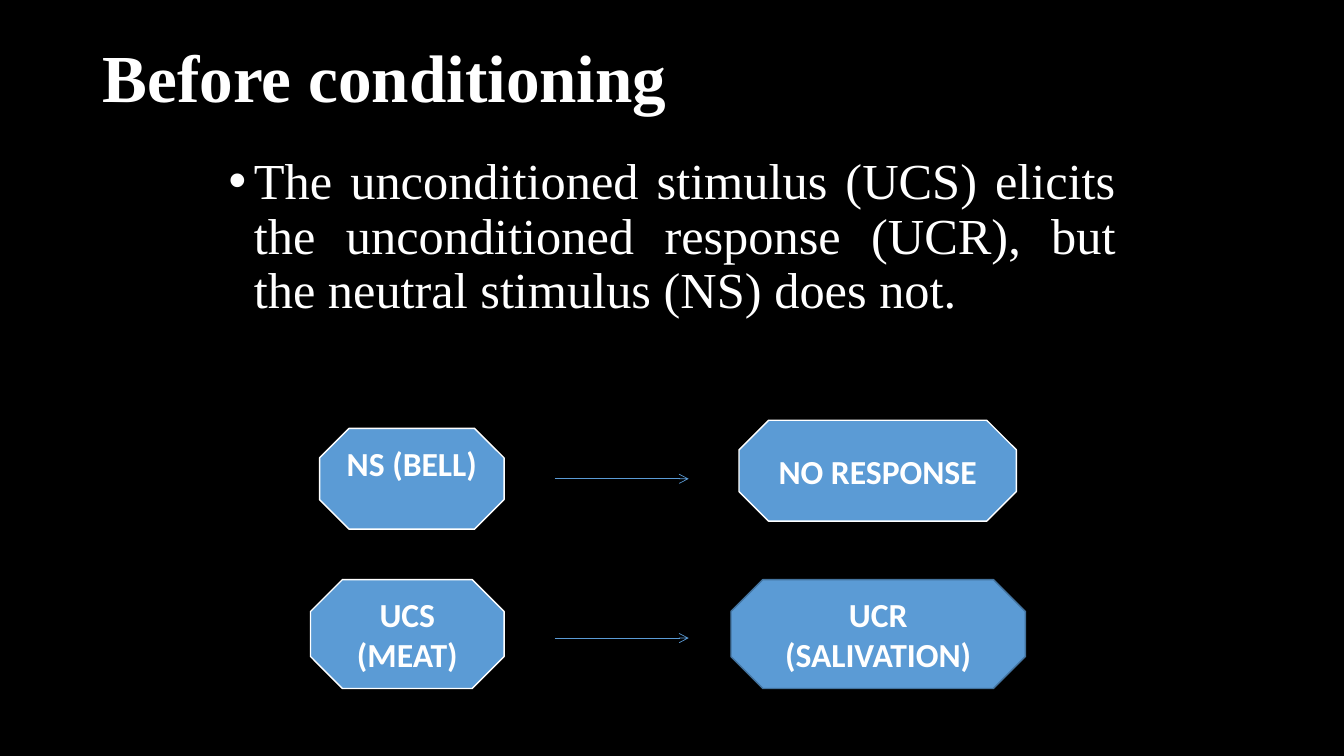
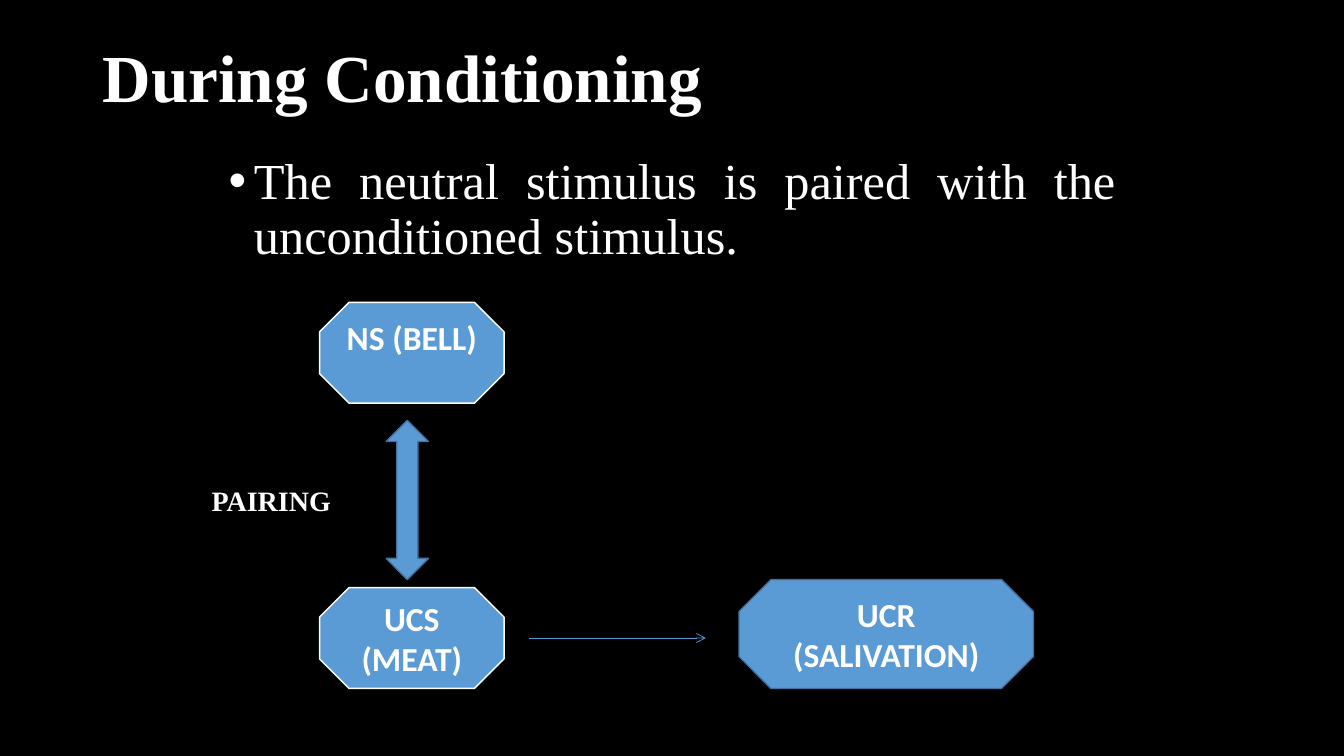
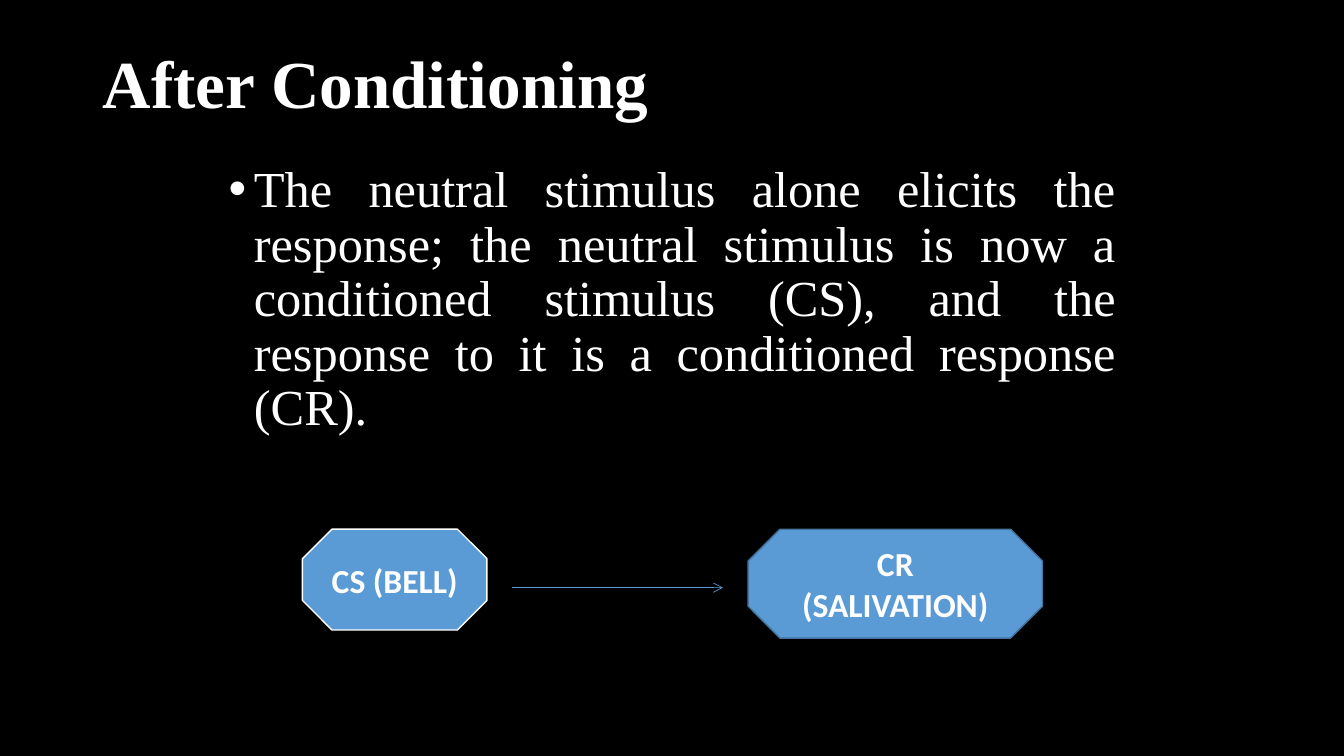
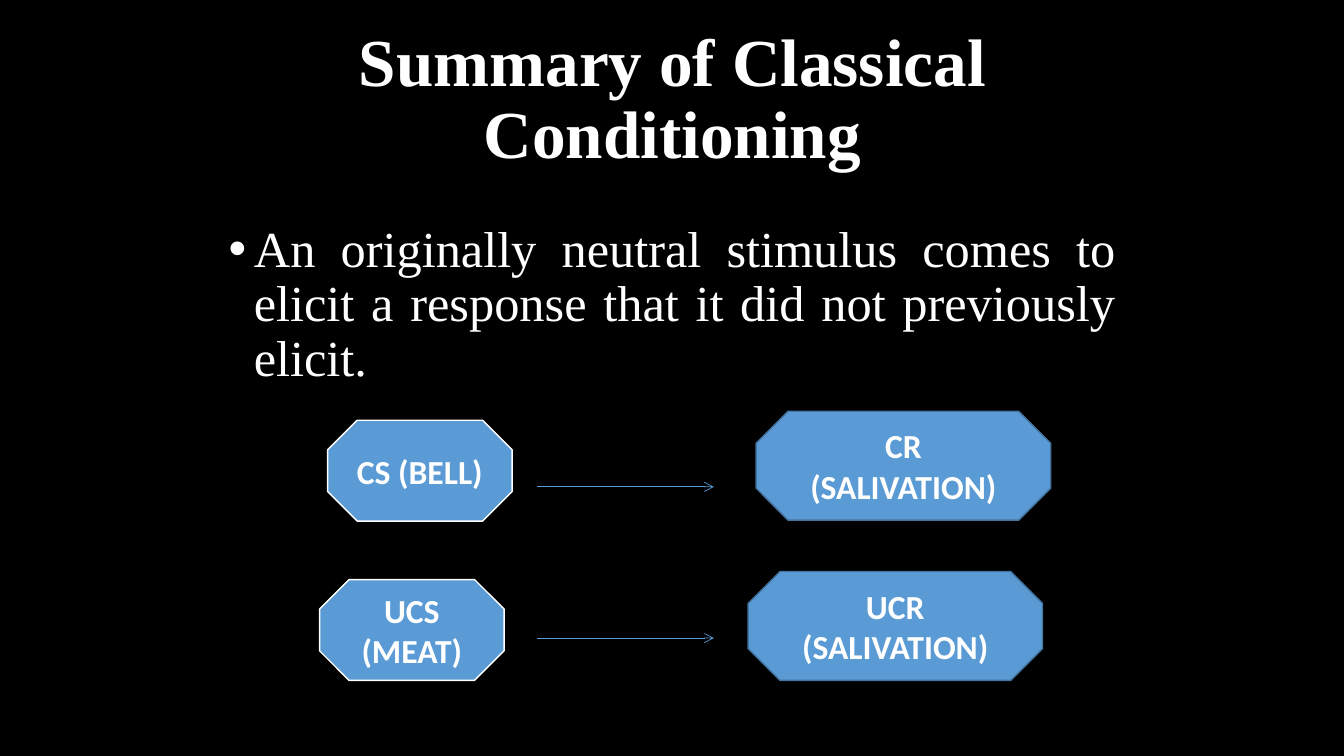
"""Build four slides that walk through classical conditioning."""
from dataclasses import dataclass

from lxml import etree
from pptx import Presentation
from pptx import util as u
from pptx.dml.color import RGBColor
from pptx.enum import shapes, text
from pptx.oxml import ns


@dataclass(frozen=True)
class Theme:
    """Hold the colours, fonts and type sizes of the deck."""
    background: RGBColor = RGBColor.from_string("000000")
    ink: RGBColor = RGBColor.from_string("FFFFFF")
    accent: RGBColor = RGBColor.from_string("5B9BD5")
    edge: RGBColor = RGBColor.from_string("43739E")
    serif: str = "Times New Roman"
    sans: str = "Calibri"
    title_size: int = 48
    body_size: int = 36
    node_size: int = 24
    label_size: int = 20


THEME = Theme()
STIMULUS = (1.83, 1)
RESPONSE = (2.92, 1.08)
BODY_BOTTOM = 7.06


def add_page(deck):
    """Add a blank slide on the dark background."""
    page = deck.slides.add_slide(deck.slide_layouts[6])
    fill = page.background.fill
    fill.solid()
    fill.fore_color.rgb = THEME.background
    return page


def add_span(para, words, font, size, bold=True):
    """Add one run of white text."""
    span = para.add_run()
    span.text = words
    span.font.name = font
    span.font.size = u.Pt(size)
    span.font.bold = bold
    span.font.color.rgb = THEME.ink


def add_text_box(page, words, left, top, width, height, size, bold=True):
    """Add a wrapped serif text box and return its paragraph."""
    box = page.shapes.add_textbox(*map(u.Inches, (left, top, width, height)))
    box.text_frame.word_wrap = True
    para = box.text_frame.paragraphs[0]
    add_span(para, words, THEME.serif, size, bold)
    return para


def add_title(page, words, top=0.39, left=0.92, width=11.5, align=text.PP_ALIGN.LEFT):
    """Add the slide title."""
    para = add_text_box(page, words, left, top, width, 1.45, THEME.title_size)
    para.alignment = align
    para.line_spacing = 0.9


def add_body(page, words, top=1.5):
    """Add the justified bullet below the title."""
    para = add_text_box(page, words, 2.17, top, 9, BODY_BOTTOM - top, THEME.body_size, False)
    para.alignment = text.PP_ALIGN.JUSTIFY
    para.line_spacing = 0.9
    props = para._p.get_or_add_pPr()
    props.set("marL", str(u.Inches(0.25)))
    props.set("indent", str(u.Inches(-0.25)))
    etree.SubElement(props, ns.qn("a:buFont")).set("typeface", "Arial")
    etree.SubElement(props, ns.qn("a:buChar")).set("char", "•")


def add_block(page, kind, left, top, size, edge):
    """Add a filled preset shape."""
    block = page.shapes.add_shape(kind, *map(u.Inches, (left, top, *size)))
    block.shadow.inherit = False
    block.fill.solid()
    block.fill.fore_color.rgb = THEME.accent
    block.line.color.rgb = edge
    block.line.width = u.Pt(1)
    return block


def add_node(page, lines, left, top, size=STIMULUS, edge=THEME.ink, raised=False):
    """Add a labelled octagon, with its text raised if asked."""
    node = add_block(page, shapes.MSO_SHAPE.OCTAGON, left, top, size, edge)
    frame = node.text_frame
    frame.word_wrap = True
    frame.vertical_anchor = text.MSO_ANCHOR.MIDDLE
    if raised:
        frame.vertical_anchor = text.MSO_ANCHOR.TOP
        frame.margin_top = 0
    for index, words in enumerate(lines):
        para = frame.add_paragraph() if index else frame.paragraphs[0]
        para.alignment = text.PP_ALIGN.CENTER
        add_span(para, words, THEME.sans, THEME.node_size)


def add_salivation(page, name, left, top):
    """Add a salivation response octagon."""
    add_node(page, [name, "(SALIVATION)"], left, top, RESPONSE, THEME.edge)


def add_arrow(page, start, end, level):
    """Add a thin horizontal arrow."""
    arrow = page.shapes.add_connector(
        shapes.MSO_CONNECTOR.STRAIGHT, *map(u.Inches, (start, level, end, level)))
    arrow.line.color.rgb = THEME.accent
    arrow.line.width = u.Pt(0.5)
    etree.SubElement(arrow.line._get_or_add_ln(), ns.qn("a:tailEnd")).set("type", "arrow")
    etree.SubElement(arrow._element.spPr, ns.qn("a:effectLst"))


def build_before(deck):
    """Build the slide on the state before conditioning."""
    page = add_page(deck)
    add_title(page, "Before conditioning")
    add_body(page, "The unconditioned stimulus (UCS) elicits the unconditioned "
                   "response (UCR), but the neutral stimulus (NS) does not.")
    add_node(page, ["NS (BELL)"], 3.17, 4.25, raised=True)
    add_node(page, ["UCS (MEAT)"], 3.08, 5.75, (1.92, 1.08))
    add_node(page, ["NO RESPONSE"], 7.33, 4.17, (2.75, 1))
    add_salivation(page, "UCR", 7.25, 5.75)
    for level in (4.75, 6.33):
        add_arrow(page, 5.5, 6.83, level)


def build_during(deck):
    """Build the slide on pairing the stimuli."""
    page = add_page(deck)
    add_title(page, "During Conditioning")
    add_body(page, "The neutral stimulus is paired with the unconditioned stimulus.")
    add_salivation(page, "UCR", 7.33, 5.75)
    add_node(page, ["UCS (MEAT)"], 3.17, 5.83)
    add_node(page, ["NS (BELL)"], 3.17, 3, raised=True)
    add_block(page, shapes.MSO_SHAPE.UP_DOWN_ARROW, 3.83, 4.17, (0.42, 1.58), THEME.edge)
    add_arrow(page, 5.25, 7, 6.33)
    add_text_box(page, "PAIRING", 2, 4.75, 1.83, 0.44, THEME.label_size)


def build_after(deck):
    """Build the slide on the conditioned response."""
    page = add_page(deck)
    add_title(page, "After Conditioning", top=0.45)
    add_body(page, "The neutral stimulus alone elicits the response; the neutral "
                   "stimulus is now a conditioned stimulus (CS), and the response "
                   "to it is a conditioned response (CR).", top=1.58)
    add_node(page, ["CS (BELL)"], 3, 5.25)
    add_arrow(page, 5.08, 7.17, 5.83)
    add_salivation(page, "CR", 7.42, 5.25)


def build_summary(deck):
    """Build the summary slide."""
    page = add_page(deck)
    add_title(page, "Summary of Classical Conditioning", 0.23, 2.17, 9, text.PP_ALIGN.CENTER)
    add_body(page, "An originally neutral stimulus comes to elicit a response "
                   "that it did not previously elicit.", top=2.17)
    add_node(page, ["CS (BELL)"], 3.25, 4.17)
    add_node(page, ["UCS (MEAT)"], 3.17, 5.75)
    add_salivation(page, "CR", 7.5, 4.08)
    add_salivation(page, "UCR", 7.42, 5.67)
    for level in (4.83, 6.33):
        add_arrow(page, 5.33, 7.08, level)


def main():
    """Build and save the deck."""
    deck = Presentation()
    deck.slide_width, deck.slide_height = u.Inches(13.33), u.Inches(7.5)
    for build in (build_before, build_during, build_after, build_summary):
        build(deck)
    deck.save("out.pptx")


if __name__ == "__main__":
    main()
